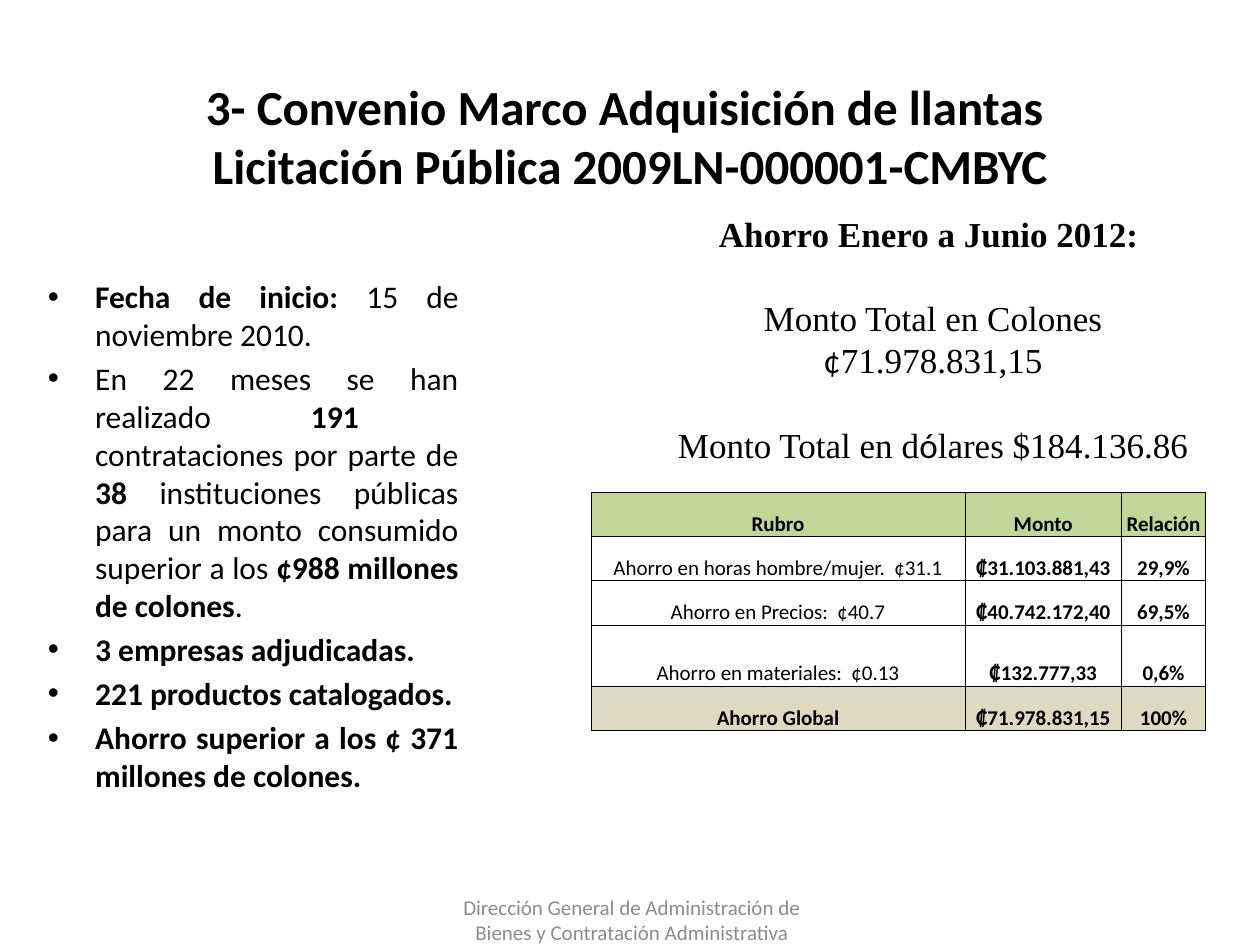
"""Builds the slide on the tyre framework agreement and its savings."""
from dataclasses import dataclass

from lxml.etree import SubElement as Sub
from pptx import Presentation as Deck
from pptx.dml.color import RGBColor as Rgb
from pptx.enum.text import MSO_ANCHOR as Anchor, MSO_AUTO_SIZE as Fit, PP_ALIGN as Align
from pptx.oxml.ns import qn
from pptx.util import Inches, Pt

HUES = {"ink": "000000", "gray": "8C8C8C", "head": "C2D69A", "total": "DDD9C3"}
SANS, SERIF = "Calibri", "Times New Roman"


@dataclass
class Bit:
    text: str
    bold: bool = False
    face: str = SANS


@dataclass
class Row:
    cells: tuple[str, str, str]
    high: float = 0.35
    fill: str = ""


FACTS = [
    [Bit("Fecha de inicio: ", True), Bit("15 de noviembre 2010.")],
    [Bit("En 22 meses se han realizado "), Bit("191", True),
     Bit("  contrataciones por parte de"), Bit(" 38 ", True),
     Bit("instituciones públicas para un monto consumido superior a los "),
     Bit("¢988 millones de colones", True), Bit(".\u00a0")],
    [Bit("3 empresas adjudicadas.", True)],
    [Bit("221 productos catalogados.", True)],
    [Bit("Ahorro superior a los ¢ 371 millones de colones.", True)],
]
SUMS = [
    [Bit("Ahorro Enero a Junio 2012: ", True, SERIF)],
    [Bit("Monto Total en Colones ", face=SERIF), Bit("¢"),
     Bit("71.978.831,15", face=SERIF)],
    [Bit("Monto Total en d", face=SERIF), Bit("ó"),
     Bit("lares $184.136.86", face=SERIF)],
]
FOOT = [[Bit("Dirección General de Administración de Bienes y Contratación Administrativa")]]
WIDE = (2.97, 1.24, 0.67)
ROWS = [
    Row(("Rubro", "Monto", "Relación"), fill="head"),
    Row(("Ahorro en horas hombre/mujer.  ¢31.1", "₡31.103.881,43", "29,9%")),
    Row(("Ahorro en Precios:  ¢40.7", "₡40.742.172,40", "69,5%")),
    Row(("Ahorro en materiales:  ¢0.13", "₡132.777,33", "0,6%"), 0.49),
    Row(("Ahorro Global", "₡71.978.831,15", "100%"), fill="total"),
]


def place(shape, left: float, top: float, width: float, height: float) -> None:
    shape.left, shape.top = Inches(left), Inches(top)
    shape.width, shape.height = Inches(width), Inches(height)


def add_bit(para, bit: Bit, size: float, hue: str = "ink") -> None:
    run = para.add_run()
    run.text = bit.text
    font = run.font
    font.name, font.size, font.bold = bit.face, Pt(size), bit.bold
    font.color.rgb = Rgb.from_string(HUES[hue])


def write(frame, paras: list[list[Bit]], size: float, hue: str = "ink",
          align=Align.CENTER, gap: float = 0) -> None:
    for i, bits in enumerate(paras):
        para = frame.add_paragraph() if i else frame.paragraphs[0]
        para.alignment = align
        para.space_before = Pt(gap if i else 0)
        for bit in bits:
            add_bit(para, bit, size, hue)


def add_box(slide, spot: tuple, paras: list[list[Bit]], size: float,
            hue: str = "ink", gap: float = 0) -> None:
    frame = slide.shapes.add_textbox(*map(Inches, spot)).text_frame
    frame.word_wrap = True
    frame.vertical_anchor = Anchor.MIDDLE
    write(frame, paras, size, hue, gap=gap)


def edge(cell) -> None:
    props = cell._tc.get_or_add_tcPr()
    for i, side in enumerate(("lnL", "lnR", "lnT", "lnB")):
        line = props.makeelement(qn(f"a:{side}"), {"w": str(Pt(0.5))})
        fill = Sub(line, qn("a:solidFill"))
        Sub(fill, qn("a:srgbClr"), val=HUES["ink"])
        props.insert(i, line)


def add_grid(slide, left: float, top: float) -> None:
    high = sum(row.high for row in ROWS)
    spot = map(Inches, (left, top, sum(WIDE), high))
    table = slide.shapes.add_table(len(ROWS), len(WIDE), *spot).table
    for col, width in zip(table.columns, WIDE):
        col.width = Inches(width)
    for i, row in enumerate(ROWS):
        table.rows[i].height = Inches(row.high)
        for j, text in enumerate(row.cells):
            cell = table.cell(i, j)
            cell.margin_left = cell.margin_right = 0
            cell.margin_top = cell.margin_bottom = 0
            cell.vertical_anchor = Anchor.BOTTOM
            if row.fill:
                cell.fill.solid()
                cell.fill.fore_color.rgb = Rgb.from_string(HUES[row.fill])
            else:
                cell.fill.background()
            edge(cell)
            bold = bool(row.fill) or j > 0
            write(cell.text_frame, [[Bit(text, bold)]], 12)


def main() -> None:
    deck = Deck()
    deck.slide_width, deck.slide_height = Inches(10), Inches(7.5)
    slide = deck.slides.add_slide(deck.slide_layouts[1])

    title, body = slide.placeholders
    place(title, 0.5, 0.6, 9, 0.95)
    title.text_frame.auto_size = Fit.NONE
    para = title.text_frame.paragraphs[0]
    para.alignment = Align.CENTER
    add_bit(para, Bit("3- Convenio Marco Adquisición de llantas ", True), 28)
    para.add_line_break()
    add_bit(para, Bit("Licitación Pública 2009LN-000001-CMBYC", True), 28)

    place(body, 0.28, 1.78, 3.46, 4.8)
    body.text_frame.auto_size = Fit.NONE
    body.text_frame.margin_top = Inches(0.42)
    write(body.text_frame, FACTS, 18, align=Align.JUSTIFY, gap=3.6)

    add_box(slide, (3.43, 7.1, 3.17, 0.4), FOOT, 12, "gray")
    add_grid(slide, 4.69, 3.91)
    add_box(slide, (5.08, 1.63, 4.65, 2.12), SUMS, 20, gap=24)
    deck.save("out.pptx")


if __name__ == "__main__":
    main()
